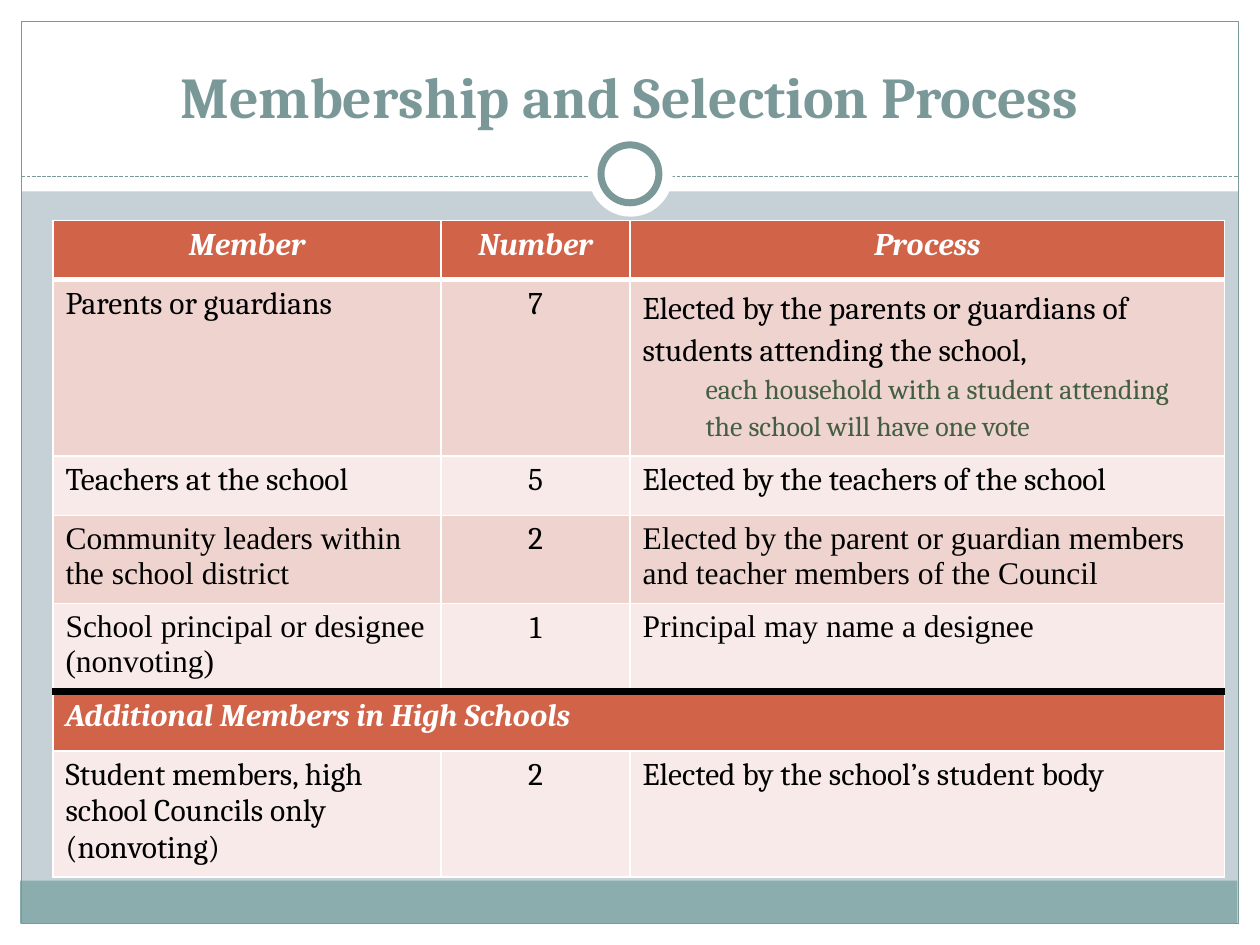
from dataclasses import dataclass

from lxml.etree import SubElement
from pptx import Presentation
from pptx.dml.color import RGBColor
from pptx.enum.dml import MSO_LINE
from pptx.enum.shapes import MSO_CONNECTOR, MSO_SHAPE
from pptx.enum.text import MSO_ANCHOR, MSO_AUTO_SIZE, PP_ALIGN
from pptx.oxml import parse_xml
from pptx.oxml.ns import nsdecls, qn
from pptx.util import Inches, Pt


@dataclass(frozen=True)
class Theme:
    page: str = "C5D1D7"
    white: str = "FFFFFF"
    black: str = "000000"
    foot: str = "8CADAE"
    frame: str = "7C999A"
    title: str = "7B9899"
    head: str = "D16349"
    dark: str = "EED3CF"
    light: str = "F7EAE9"
    note: str = "435E40"
    font: str = "Cambria"
    alt: str = "Times New Roman"
    big: float = 33
    body: float = 18
    small: float = 16


T = Theme()


@dataclass(frozen=True)
class Panel:
    box: tuple[float, float, float, float]
    fill: str | None = T.white
    line: float = 0
    kind: MSO_SHAPE = MSO_SHAPE.RECTANGLE


@dataclass(frozen=True)
class Edge:
    color: str = T.white
    width: float = 1


@dataclass(frozen=True)
class Row:
    texts: tuple[str, ...]
    high: float
    fill: str
    alt: bool = False
    note: str = ""
    base: Edge = Edge()


PANELS = [
    Panel((0, 7.33, 10, 0.17)),
    Panel((0, 0, 10, 1.52)),
    Panel((0, 0, 0.17, 7.5)),
    Panel((9.83, 0, 0.17, 7.5)),
    Panel((0.16, 6.99, 9.66, 0.34), T.foot),
    Panel((0.17, 0.17, 9.66, 7.16), None, 0.75),
]
RINGS = [
    Panel((4.67, 1.05, 0.67, 0.67), kind=MSO_SHAPE.OVAL),
    Panel((4.77, 1.15, 0.46, 0.46), line=4, kind=MSO_SHAPE.OVAL),
]
WIDTHS = [3.08, 1.5, 4.72]
ROWS = [
    Row(("Member", "Number", "Process"), 0.47, T.head, base=Edge(width=3)),
    Row(("Parents or guardians", "7",
         "Elected by the parents or guardians of students attending the school,"),
        1.4, T.dark,
        note="each household with a student attending the school will have one vote"),
    Row(("Teachers at the school", "5", "Elected by the teachers of the school"),
        0.47, T.light),
    Row(("Community leaders within the school district", "2",
         "Elected by the parent or guardian members and teacher members of the Council"),
        0.7, T.dark, alt=True),
    Row(("School principal or designee (nonvoting)", "1", "Principal may name a designee"),
        0.7, T.light, alt=True, base=Edge(T.black, 4.5)),
    Row(("Additional Members in High Schools",), 0.47, T.head),
    Row(("Student members, high school Councils only (nonvoting)", "2",
         "Elected by the school’s student body"), 1, T.light),
]


def rgb(code: str) -> RGBColor:
    return RGBColor.from_string(code)


def add_run(para, text: str, size: float, color: str, font: str = T.font,
            bold: bool = False, slant: bool = False) -> None:
    run = para.add_run()
    run.text = text
    face = run.font
    face.name, face.size, face.bold, face.italic = font, Pt(size), bold, slant
    face.color.rgb = rgb(color)


def add_panel(slide, panel: Panel) -> None:
    shape = slide.shapes.add_shape(panel.kind, *map(Inches, panel.box))
    shape.shadow.inherit = False
    if panel.fill:
        shape.fill.solid()
        shape.fill.fore_color.rgb = rgb(panel.fill)
    else:
        shape.fill.background()
    if panel.line:
        shape.line.color.rgb = rgb(T.frame)
        shape.line.width = Pt(panel.line)
    else:
        shape.line.fill.background()


def add_rule(slide) -> None:
    rule = slide.shapes.add_connector(
        MSO_CONNECTOR.STRAIGHT, Inches(0.17), Inches(1.4), Inches(9.83), Inches(1.4))
    rule.line.color.rgb = rgb(T.frame)
    rule.line.width = Pt(0.75)
    rule.line.dash_style = MSO_LINE.SQUARE_DOT
    SubElement(rule.element.spPr, qn("a:effectLst"))


def set_title(slide) -> None:
    title = slide.shapes.title
    title.left, title.top, title.width, title.height = map(Inches, (0.33, 0.25, 9.33, 0.83))
    slide.shapes.element.append(title.element)
    frame = title.text_frame
    frame.auto_size = MSO_AUTO_SIZE.NONE
    frame.vertical_anchor = MSO_ANCHOR.BOTTOM
    para = frame.paragraphs[0]
    para.alignment = PP_ALIGN.CENTER
    add_run(para, "Membership and Selection Process", T.big, T.title, bold=True)


def set_edges(cell, top: Edge, base: Edge) -> None:
    props = cell._tc.get_or_add_tcPr()
    sides = {"L": Edge(), "R": Edge(), "T": top, "B": base}
    for spot, (side, edge) in enumerate(sides.items()):
        props.insert(spot, parse_xml(
            f'<a:ln{side} {nsdecls("a")} w="{Pt(edge.width)}"><a:solidFill>'
            f'<a:srgbClr val="{edge.color}"/></a:solidFill></a:ln{side}>'))


def add_note(frame, text: str) -> None:
    para = frame.add_paragraph()
    para.level = 1
    props = para._p.get_or_add_pPr()
    props.set("marL", str(Inches(0.5)))
    props.set("indent", "0")
    add_run(para, text, T.small, T.note)
    for item in frame.paragraphs:
        item.line_spacing = 1.15


def fill_cell(cell, row: Row, col: int) -> None:
    head = row.fill == T.head
    mid = col == 1
    para = cell.text_frame.paragraphs[0]
    centred = mid or (head and len(row.texts) > 1)
    para.alignment = PP_ALIGN.CENTER if centred else PP_ALIGN.LEFT
    add_run(para, row.texts[col], T.body, T.white if head else T.black,
            T.alt if row.alt and not mid else T.font, head, head)
    if row.note and col == 2:
        add_note(cell.text_frame, row.note)


def add_grid(slide) -> None:
    grid = slide.shapes.add_table(
        len(ROWS), len(WIDTHS), Inches(0.42), Inches(1.75),
        Inches(sum(WIDTHS)), Inches(sum(row.high for row in ROWS))).table
    for col, width in zip(grid.columns, WIDTHS):
        col.width = Inches(width)
    top = Edge()
    for y, row in enumerate(ROWS):
        grid.rows[y].height = Inches(row.high)
        if len(row.texts) == 1:
            grid.cell(y, 0).merge(grid.cell(y, len(WIDTHS) - 1))
        for x in range(len(WIDTHS)):
            cell = grid.cell(y, x)
            cell.fill.solid()
            cell.fill.fore_color.rgb = rgb(row.fill)
            set_edges(cell, top, row.base)
            if x < len(row.texts):
                fill_cell(cell, row, x)
        top = row.base


def main() -> None:
    deck = Presentation()
    deck.slide_width, deck.slide_height = Inches(10), Inches(7.5)
    slide = deck.slides.add_slide(deck.slide_layouts[5])
    slide.background.fill.solid()
    slide.background.fill.fore_color.rgb = rgb(T.page)
    for panel in PANELS:
        add_panel(slide, panel)
    add_rule(slide)
    for ring in RINGS:
        add_panel(slide, ring)
    set_title(slide)
    add_grid(slide)
    deck.save("out.pptx")


if __name__ == "__main__":
    main()
